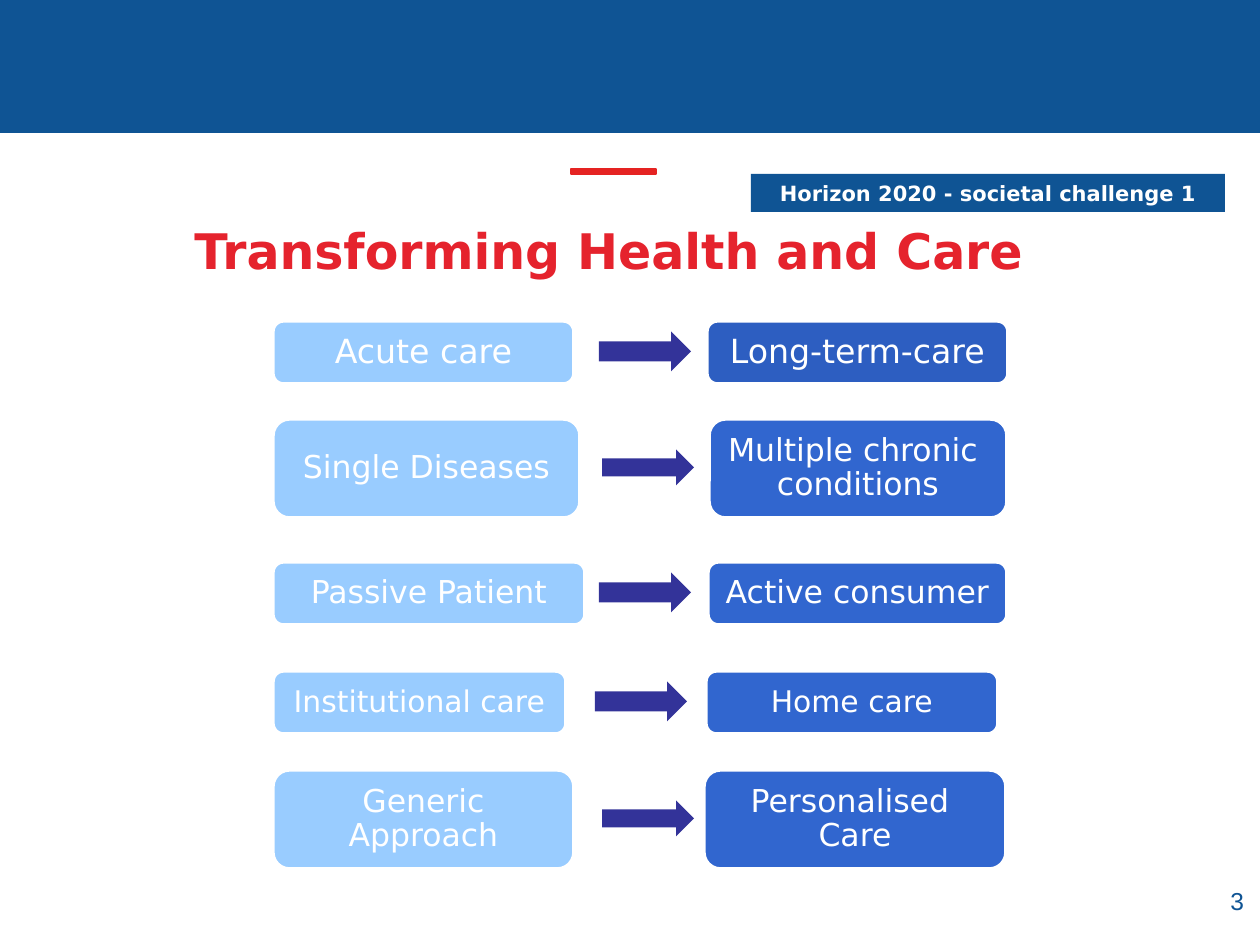
from pptx import Presentation
from pptx.dml.color import RGBColor
from pptx.enum.shapes import MSO_SHAPE
from pptx.enum.text import MSO_ANCHOR, PP_ALIGN
from pptx.util import Pt

NAVY = RGBColor(0x0F, 0x54, 0x94)
RED = RGBColor(0xE5, 0x23, 0x22)
TITLE = RGBColor(0xE5, 0x23, 0x2D)
WHITE = RGBColor(0xFF, 0xFF, 0xFF)
SKY = RGBColor(0x99, 0xCC, 0xFF)
BLUE = RGBColor(0x31, 0x66, 0xCF)
DEEP = RGBColor(0x2D, 0x5E, 0xC1)
INDIGO = RGBColor(0x33, 0x33, 0x99)
SANS = "DejaVu Sans"

LEFT, ARROW = 273, 92
# from, to (lines), top, height, text size, from width, arrow x, to x, to width, to fill
ROWS = [
    (["Acute care"], ["Long-term-care"], 321, 63, 19, 301, 599, 707, 301, DEEP),
    (["Single Diseases"], ["Multiple chronic ", "conditions"],
     419, 99, 18, 307, 602, 709, 298, BLUE),
    (["Passive Patient"], ["Active consumer"], 562, 63, 18, 312, 599, 708, 299, BLUE),
    (["Institutional care"], ["Home care"], 671, 63, 17, 293, 595, 706, 292, BLUE),
    (["Generic Approach"], ["Personalised ", "Care"],
     770, 99, 18, 301, 602, 704, 302, BLUE),
]


def px(n):
    return round(n * 914400 / 126)


def place(item, x, y, w, h):
    item.left, item.top, item.width, item.height = px(x), px(y), px(w), px(h)


def draw(kind, x, y, w, h, fill, line=None, weight=0.75):
    shape = slide.shapes.add_shape(kind, px(x), px(y), px(w), px(h))
    shape.shadow.inherit = False
    shape.fill.solid()
    shape.fill.fore_color.rgb = fill
    if line is None:
        shape.line.fill.background()
    else:
        shape.line.color.rgb = line
        shape.line.width = Pt(weight)
    return shape


def write(item, lines, size, color, bold=False, align=PP_ALIGN.CENTER,
          font=SANS, space=1.0, anchor=MSO_ANCHOR.MIDDLE, pad=(13, 6)):
    frame = item.text_frame
    frame.word_wrap = True
    frame.vertical_anchor = anchor
    frame.margin_left = frame.margin_right = px(pad[0])
    frame.margin_top = frame.margin_bottom = px(pad[1])
    para = frame.paragraphs[0]
    para.alignment = align
    para.line_spacing = space
    for i, line in enumerate(lines):
        if i:
            para.add_line_break()
        run = para.add_run()
        run.text = line
        run.font.name = font
        run.font.size = Pt(size)
        run.font.bold = bold
        run.font.color.rgb = color


def card(lines, x, y, w, h, size, fill):
    box = draw(MSO_SHAPE.ROUNDED_RECTANGLE, x, y, w, h, fill, WHITE, 2)
    write(box, lines, size, WHITE, space=0.9, pad=(9, 9))


deck = Presentation()
deck.slide_width, deck.slide_height = px(1260), px(945)
slide = deck.slides.add_slide(deck.slide_layouts[5])

draw(MSO_SHAPE.RECTANGLE, 0, 0, 1260, 132, NAVY, NAVY)
draw(MSO_SHAPE.RECTANGLE, 571, 169, 85, 5, RED, RED)
tag = draw(MSO_SHAPE.RECTANGLE, 751, 174, 474, 38, NAVY)
write(tag, ["Horizon 2020 - societal challenge 1"], 12, WHITE, bold=True)

title = slide.shapes.title
place(title, 127, 214, 914, 72)
write(title, ["Transforming Health and Care"], 28, TITLE, bold=True)
title.text_frame.margin_left = px(62)
title.text_frame.word_wrap = False

for old, new, top, high, size, wide, tip, right, span, fill in ROWS:
    thick = 40 if high < 80 else 36
    draw(MSO_SHAPE.RIGHT_ARROW, tip, top + (high - thick) / 2 - 1, ARROW, thick, INDIGO)
    card(old, LEFT, top, wide, high, size, SKY)
    card(new, right, top, span, high, size, fill)

page = slide.shapes.add_textbox(px(963), px(880), px(294), px(65))
write(page, ["3"], 14, NAVY, align=PP_ALIGN.RIGHT, font="Arial", anchor=MSO_ANCHOR.TOP)

deck.save("out.pptx")
